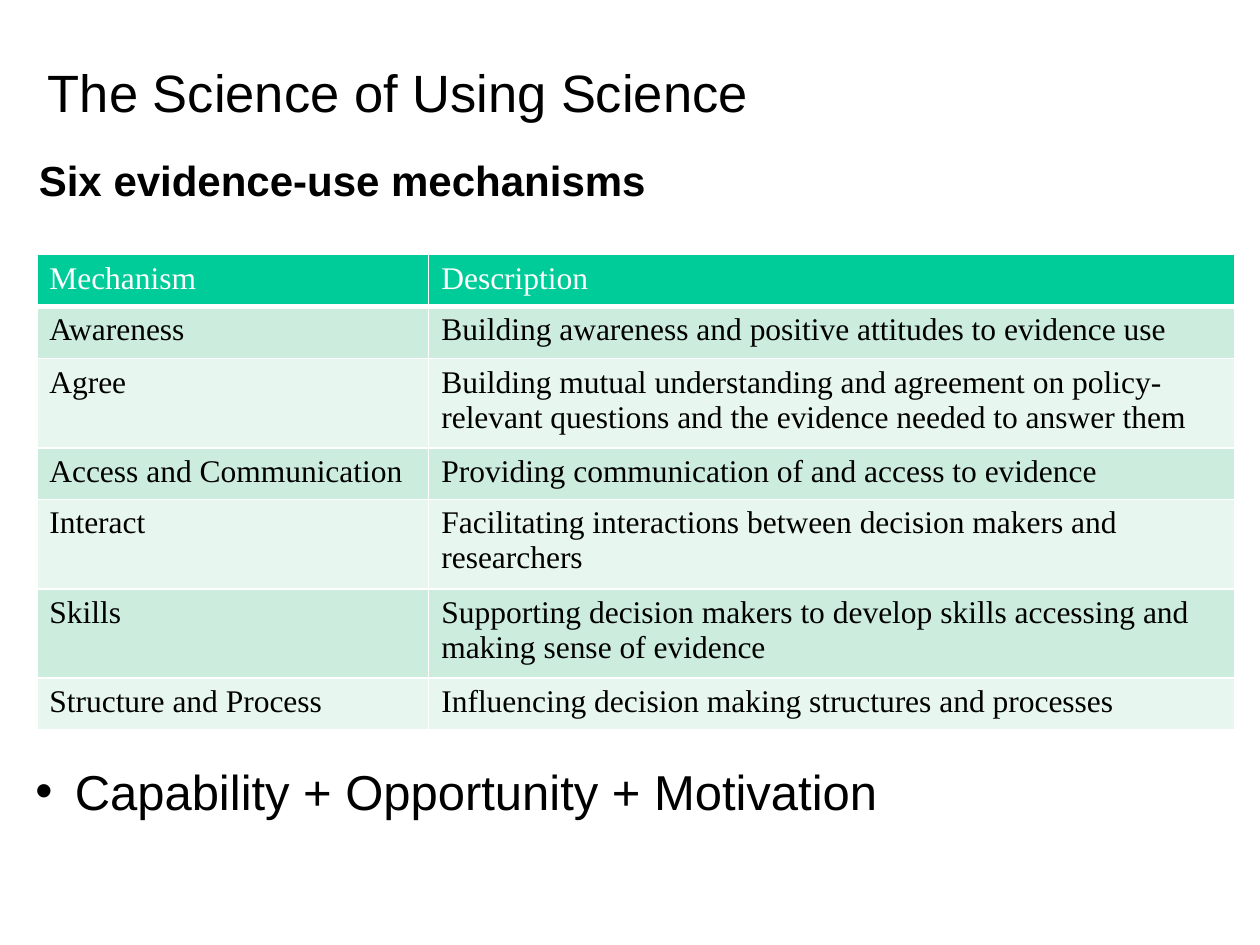
from dataclasses import dataclass

from lxml.etree import SubElement
from pptx import Presentation
from pptx.dml.color import RGBColor as RGB
from pptx.enum.text import MSO_ANCHOR as Anchor, MSO_AUTO_SIZE as AutoSize, PP_ALIGN as Align
from pptx.oxml.ns import qn
from pptx.util import Pt


@dataclass(frozen=True)
class Theme:
    sans: str = "Arial"
    serif: str = "Times New Roman"
    ink: str = "000000"
    paper: str = "FFFFFF"
    header: str = "00CC99"
    bands: tuple = ("CCECDE", "E7F6EF")
    heading_size: float = 30
    title_size: float = 24
    body_size: float = 28
    table_size: float = 18


THEME = Theme()

MECHANISMS = [
    ("Mechanism", "Description"),
    ("Awareness", "Building awareness and positive attitudes to evidence use"),
    ("Agree", "Building mutual understanding and agreement on policy-relevant "
              "questions and the evidence needed to answer them"),
    ("Access and Communication", "Providing communication of and access to evidence"),
    ("Interact", "Facilitating interactions between decision makers and researchers"),
    ("Skills", "Supporting decision makers to develop skills accessing and "
               "making sense of evidence"),
    ("Structure and Process", "Influencing decision making structures and processes"),
]
COLUMN_WIDTHS = (224, 460.5)
ROW_HEIGHTS = (29.5, 30, 51, 29.5, 51, 51, 29.5)


def style(paragraph, face, size, color, bold=False):
    font = paragraph.font
    font.name, font.size, font.bold = face, Pt(size), bold
    font.color.rgb = RGB.from_string(color)


def place(shape, box):
    shape.left, shape.top, shape.width, shape.height = map(Pt, box)


def fill_frame(frame, text, anchor):
    """Put one left-aligned paragraph in a frame and return it."""
    frame.word_wrap = True
    frame.auto_size = AutoSize.NONE
    frame.vertical_anchor = anchor
    paragraph = frame.paragraphs[0]
    paragraph.text = text
    paragraph.alignment = Align.LEFT
    paragraph.space_before = Pt(0)
    return paragraph


def add_heading(slide, box, text):
    heading = slide.shapes.add_textbox(*map(Pt, box))
    frame = heading.text_frame
    frame.margin_left, frame.margin_top = Pt(14.4), Pt(3)
    frame.margin_right = frame.margin_bottom = 0
    style(fill_frame(frame, text, Anchor.TOP), THEME.sans, THEME.heading_size, THEME.ink)


def set_title(slide, box, text):
    title = slide.shapes.title
    place(title, box)
    style(fill_frame(title.text_frame, text, Anchor.MIDDLE),
          THEME.sans, THEME.title_size, THEME.ink, bold=True)


def set_summary(slide, box, text, indent=22.5):
    summary = slide.placeholders[1]
    place(summary, box)
    summary.text_frame.margin_top = Pt(6.5)
    paragraph = fill_frame(summary.text_frame, text, Anchor.TOP)
    # Hanging bullet
    props = paragraph._p.get_or_add_pPr()
    props.set("marL", str(Pt(indent)))
    props.set("indent", str(-Pt(indent)))
    SubElement(props, qn("a:buChar"), char="•")
    style(paragraph, THEME.sans, THEME.body_size, THEME.ink)


def add_borders(cell, bottom_width):
    """Draw white cell borders; they must precede the fill in the XML."""
    props = cell._tc.get_or_add_tcPr()
    for side, width in (("L", 1), ("R", 1), ("T", 1), ("B", bottom_width)):
        line = SubElement(props, qn(f"a:ln{side}"), w=str(Pt(width)))
        SubElement(SubElement(line, qn("a:solidFill")), qn("a:srgbClr"), val=THEME.paper)


def add_mechanisms(slide, left, top):
    table = slide.shapes.add_table(
        len(ROW_HEIGHTS), len(COLUMN_WIDTHS), Pt(left), Pt(top),
        Pt(sum(COLUMN_WIDTHS)), Pt(sum(ROW_HEIGHTS))).table
    for column, width in zip(table.columns, COLUMN_WIDTHS):
        column.width = Pt(width)
    for index, (row, height, texts) in enumerate(zip(table.rows, ROW_HEIGHTS, MECHANISMS)):
        row.height = Pt(height)
        is_header = index == 0
        fill = THEME.header if is_header else THEME.bands[(index - 1) % 2]
        for cell, text in zip(row.cells, texts):
            add_borders(cell, 3 if is_header else 1)
            cell.fill.solid()
            cell.fill.fore_color.rgb = RGB.from_string(fill)
            cell.text = text
            style(cell.text_frame.paragraphs[0], THEME.serif, THEME.table_size,
                  THEME.paper if is_header else THEME.ink)


def main():
    deck = Presentation()
    deck.slide_width, deck.slide_height = Pt(720), Pt(540)
    slide = deck.slides.add_slide(deck.slide_layouts[1])
    set_title(slide, (15, 77, 661, 51), "Six evidence-use mechanisms")
    add_mechanisms(slide, 21, 145.5)
    set_summary(slide, (13, 428.5, 663, 83), "Capability + Opportunity + Motivation")
    add_heading(slide, (13, 31.5, 661, 67.5), "The Science of Using Science")
    deck.save("out.pptx")


if __name__ == "__main__":
    main()
